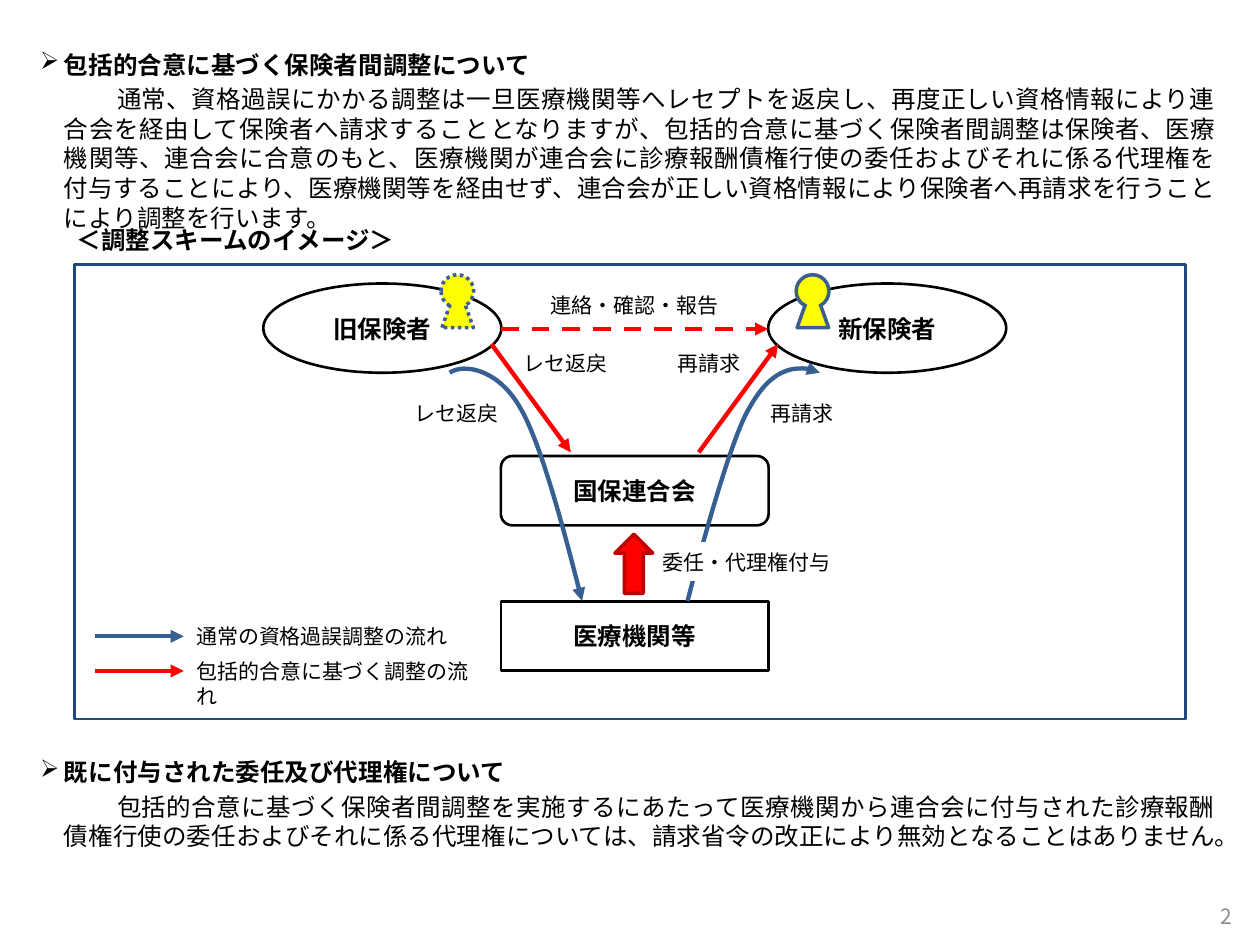
from lxml.etree import SubElement
from pptx import Presentation
from pptx.dml.color import RGBColor
from pptx.enum.dml import MSO_LINE_DASH_STYLE as DASH
from pptx.enum.shapes import MSO_CONNECTOR, MSO_SHAPE as SHAPE
from pptx.enum.text import MSO_ANCHOR as ANCHOR, PP_ALIGN as ALIGN
from pptx.oxml.ns import qn
from pptx.util import Pt

BLACK = RGBColor(0, 0, 0)
WHITE = RGBColor(255, 255, 255)
GRAY = RGBColor(0x8C, 0x8C, 0x8C)
NAVY = RGBColor(0x1F, 0x49, 0x7D)
BLUE = RGBColor(0x37, 0x60, 0x92)
KEY_BLUE = RGBColor(0x3A, 0x5F, 0x8C)
RED = RGBColor(255, 0, 0)
DARK_RED = RGBColor(0xC0, 0, 0)
YELLOW = RGBColor(255, 255, 0)

AXIS = 362.75  # vertical axis of symmetry of the scheme


def mirror(x, width=0):
    return 2 * AXIS - x - width


class SlideMaker:
    font = "Noto Sans CJK JP"
    leading = 1.22

    def __init__(self, slide):
        self.slide = slide

    def paragraph(self, para, text, size, bold=False, color=BLACK, align=ALIGN.LEFT):
        para.text = text
        para.alignment = align
        para.line_spacing = Pt(round(size * self.leading, 1))
        font = para.font
        font.name, font.size, font.bold = self.font, Pt(size), bold
        font.color.rgb = color
        props = para._p.pPr.find(qn("a:defRPr"))
        SubElement(props, qn("a:ea"), typeface=self.font)

    def indent(self, para, left, first):
        para._p.pPr.set("marL", str(Pt(left)))
        para._p.pPr.set("indent", str(Pt(first)))

    def text(self, box, text, size=12, anchor=ANCHOR.TOP, **style):
        frame = self.slide.shapes.add_textbox(*map(Pt, box)).text_frame
        frame.word_wrap = True
        frame.vertical_anchor = anchor
        self.paragraph(frame.paragraphs[0], text, size, **style)
        return frame

    def section(self, box, heading, body):
        frame = self.text(box, heading, 14, bold=True, align=ALIGN.JUSTIFY)
        title = frame.paragraphs[0]
        self.indent(title, 13.7, -13.7)
        bullet = SubElement(title._p.pPr, qn("a:buChar"), char="➢")
        title._p.pPr.find(qn("a:defRPr")).addprevious(bullet)
        detail = frame.add_paragraph()
        self.paragraph(detail, body, 14, align=ALIGN.JUSTIFY)
        detail.space_before = Pt(2.4)
        self.indent(detail, 13.7, 30.3)

    def shape(self, kind, box, fill=None, line=None, width=1.5, dash=None,
              text=None, size=14, bold=True, align=ALIGN.CENTER):
        shape = self.slide.shapes.add_shape(kind, *map(Pt, box))
        self.paint(shape, fill, line, width, dash)
        if text:
            shape.text_frame.vertical_anchor = ANCHOR.MIDDLE
            self.paragraph(shape.text_frame.paragraphs[0], text, size, bold, align=align)
        return shape

    def paint(self, shape, fill, line, width, dash=None):
        shape.shadow.inherit = False
        if fill is None:
            shape.fill.background()
        else:
            shape.fill.solid()
            shape.fill.fore_color.rgb = fill
        if line is None:
            shape.line.fill.background()
        else:
            self.stroke(shape, line, width, dash)

    def stroke(self, shape, color, width, dash=None):
        shape.line.color.rgb = color
        shape.line.width = Pt(width)
        if dash:
            shape.line.dash_style = dash

    def arrowhead(self, shape, end="tailEnd"):
        outline = shape._element.spPr.find(qn("a:ln"))
        SubElement(outline, qn("a:" + end), type="triangle")

    def arrow(self, start, end, color, dash=None):
        line = self.slide.shapes.add_connector(
            MSO_CONNECTOR.STRAIGHT, *map(Pt, (*start, *end)))
        self.stroke(line, color, 2.5, dash)
        self.arrowhead(line)
        SubElement(line._element.spPr, qn("a:effectLst"))

    def curve(self, points, color, end):
        start, *rest = [(Pt(x), Pt(y)) for x, y in points]
        builder = self.slide.shapes.build_freeform(*start)
        builder.add_line_segments(rest, close=False)
        shape = builder.convert_to_shape()
        # Turn every three straight segments into one Bézier segment
        outline = next(shape._element.iter(qn("a:path")))
        segments = outline.findall(qn("a:lnTo"))
        for i in range(0, len(segments), 3):
            bezier = SubElement(outline, qn("a:cubicBezTo"))
            for segment in segments[i:i + 3]:
                bezier.append(segment[0])
                outline.remove(segment)
        self.paint(shape, None, color, 2.5)
        self.arrowhead(shape, end)

    def keyhole(self, x, y, dash=None):
        outlined = dict(fill=YELLOW, line=KEY_BLUE, width=2, dash=dash)
        parts = [
            self.shape(SHAPE.OVAL, (x, y, 18.7, 18.7), **outlined),
            self.shape(SHAPE.ISOSCELES_TRIANGLE, (x + 0.5, y + 5, 18, 25.2), **outlined),
            self.shape(SHAPE.OVAL, (x + 1.9, y + 2, 15.1, 15.8), fill=YELLOW),
        ]
        self.slide.shapes.add_group_shape(parts)


def main():
    prs = Presentation()
    prs.slide_width, prs.slide_height = Pt(720), Pt(540)
    page = SlideMaker(prs.slides.add_slide(prs.slide_layouts[6]))

    # Page number and first section
    page.text((543.6, 509, 167.8, 28.8), "2", anchor=ANCHOR.MIDDLE,
              color=GRAY, align=ALIGN.RIGHT)
    page.section(
        (15.8, 24.5, 686, 94), "包括的合意に基づく保険者間調整について",
        "通常、資格過誤にかかる調整は一旦医療機関等へレセプトを返戻し、再度正しい資格情報により"
        "連合会を経由して保険者へ請求することとなりますが、包括的合意に基づく保険者間調整は保険者、"
        "医療機関等、連合会に合意のもと、医療機関が連合会に診療報酬債権行使の委任およびそれに係る"
        "代理権を付与することにより、医療機関等を経由せず、連合会が正しい資格情報により保険者へ"
        "再請求を行うことにより調整を行います。")

    # Parties and frame of the scheme
    insurer = (150.5, 162, 136, 51)
    left, width = 286.25, 153
    parties = [
        (SHAPE.OVAL, insurer, "旧保険者"),
        (SHAPE.OVAL, (mirror(150.5, 136), *insurer[1:]), "新保険者"),
        (SHAPE.ROUNDED_RECTANGLE, (left, 260.6, width, 39.6), "国保連合会"),
        (SHAPE.RECTANGLE, (left, 343.6, width, 39.6), "医療機関等"),
    ]
    for kind, box, name in parties:
        page.shape(kind, box, line=BLACK, text=name)
    page.shape(SHAPE.RECTANGLE, (42.5, 151, 635, 260), line=NAVY)

    # Flows based on the comprehensive agreement
    page.arrow((286.5, 188), (mirror(286.5), 188), RED, DASH.DASH)
    page.arrow((280.8, 196.6), (326.2, 258.5), RED)
    page.arrow((mirror(326.2), 258.5), (mirror(280.8), 196.6), RED)

    # Usual flows
    usual = [(257, 213), (265, 207.4), (285, 211), (297.4, 233.3),
             (310.3, 254.9), (332.6, 343.4), (332.6, 343.4)]
    page.curve(usual, BLUE, "tailEnd")
    page.curve([(mirror(x), y) for x, y in usual], BLUE, "headEnd")

    # Captions
    page.text((36.7, 124.6, 238, 24.5), "＜調整スキームのイメージ＞", 14, bold=True)
    page.text((306, 163.4, 113, 21.6), "連絡・確認・報告", align=ALIGN.CENTER)
    page.text((292.3, 196.6, 67.7, 21.6), "レセ返戻")
    page.text((371.5, 196.6, 67.7, 21.6), "再請求", align=ALIGN.CENTER)
    page.text((433.4, 225.4, 67.7, 21.6), "再請求")
    page.text((229.7, 225.4, 67.7, 21.6), "レセ返戻")

    # Legend
    legend = [(363.6, BLUE, 158.4, "通常の資格過誤調整の流れ"),
              (383.4, RED, 181.4, "包括的合意に基づく調整の流れ")]
    for y, color, text_width, meaning in legend:
        page.arrow((54, y), (105, y), color)
        page.text((105, y - 11, text_width, 21.6), meaning)

    # Keyhole marks of the old and the new insurer
    page.keyhole(252, 157, DASH.ROUND_DOT)
    page.keyhole(455, 157)

    # Delegation
    page.shape(SHAPE.RECTANGLE, (371.5, 310.3, 113, 21.6), fill=WHITE, line=WHITE,
               width=0.75, text="委任・代理権付与", size=12, bold=False, align=ALIGN.LEFT)
    page.shape(SHAPE.UP_ARROW, (351.4, 305.3, 21.6, 33.8), fill=RED,
               line=DARK_RED, width=2)

    # Second section
    page.section(
        (15.8, 429, 686, 60.5), "既に付与された委任及び代理権について",
        "包括的合意に基づく保険者間調整を実施するにあたって医療機関から連合会に付与された"
        "診療報酬債権行使の委任およびそれに係る代理権については、請求省令の改正により"
        "無効となることはありません。")

    prs.save("out.pptx")


if __name__ == "__main__":
    main()
